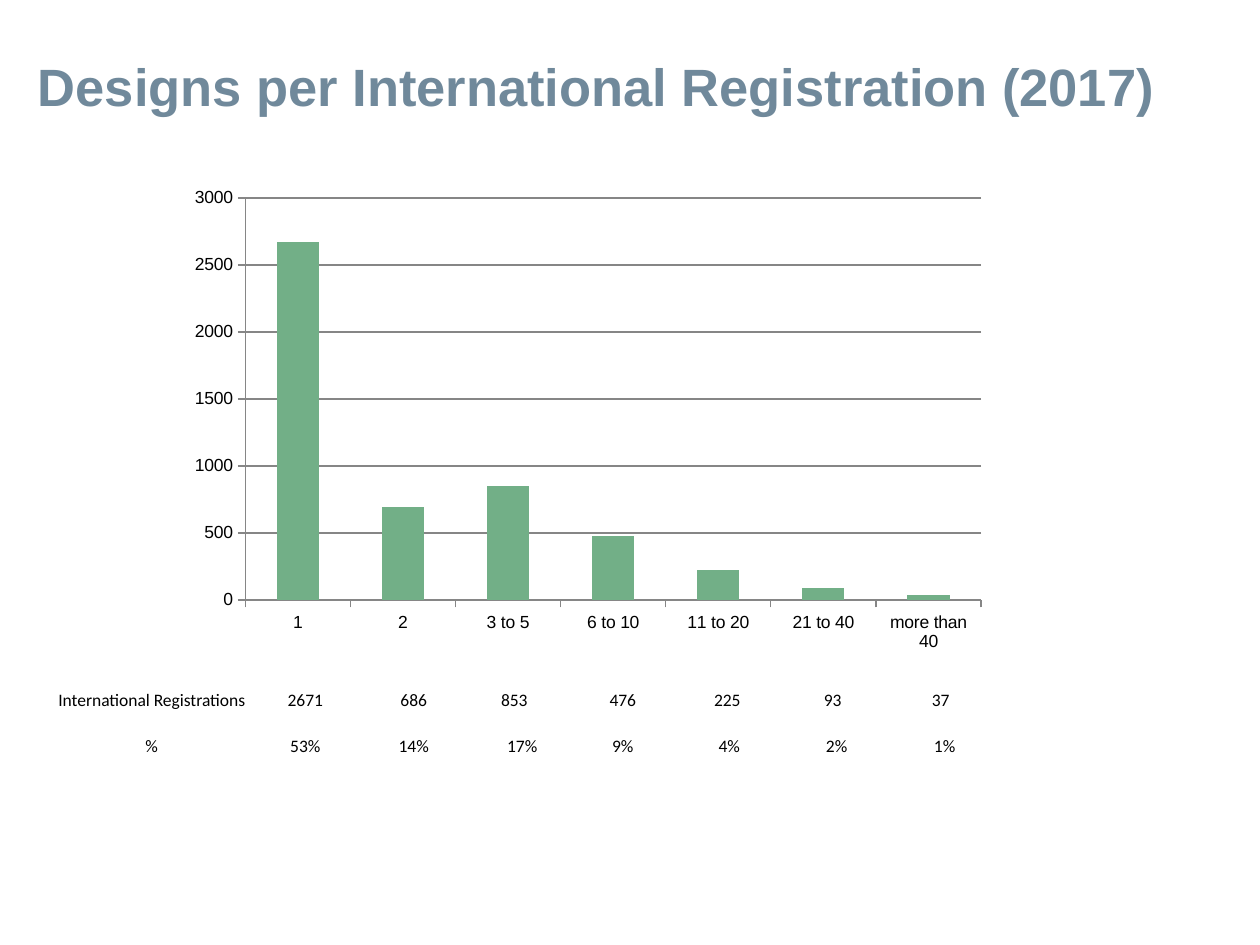
from pptx import Presentation
from pptx.chart.data import CategoryChartData
from pptx.dml.color import RGBColor
from pptx.enum.chart import XL_CHART_TYPE as ChartType, XL_TICK_MARK as TickMark
from pptx.enum.text import MSO_ANCHOR as Anchor, PP_ALIGN as Align
from pptx.util import Pt

COLORS = {"title": "70899B", "bar": "72AF87", "axis": "868686",
          "text": "000000", "cell": "FFFFFF"}

DESIGNS = ["1", "2", "3 to 5", "6 to 10", "11 to 20", "21 to 40", "more than 40"]
BAR_HEIGHTS = [2670, 690, 850, 480, 220, 90, 40]
REGISTRATIONS = ["2671", "686", "853", "476", "225", "93", "37"]
SHARES = ["53%", "14%", "17%", "9%", "4%", "2%", "1%"]

COLUMN_WIDTHS = [113, 62.5, 57, 62.5, 57, 62.5, 62.5, 61]
ROW_HEIGHTS = [28, 26]
# Extra left inset of each cell, in points, nudging its centred text rightwards
NUDGES = [[0, 0, 4.5, 0, 4.5, 4.5, 0, 0],
          [0, 0, 4.5, 9, 4.5, 6.8, 4.5, 4.5]]


def color(name):
    return RGBColor.from_string(COLORS[name])


def style_font(font, face, size, color_name, bold=False):
    font.name, font.size, font.bold = face, Pt(size), bold
    font.color.rgb = color(color_name)


def place_title(slide, left, top, width, height):
    title = slide.shapes.title
    title.left, title.top, title.width, title.height = map(Pt, (left, top, width, height))
    frame = title.text_frame
    frame.text = "Designs per International Registration (2017)"
    frame.word_wrap = True
    frame.vertical_anchor = Anchor.MIDDLE
    frame.margin_bottom = Pt(61)
    paragraph = frame.paragraphs[0]
    paragraph.alignment = Align.LEFT
    style_font(paragraph.font, "Arial", 30, "title", bold=True)


def add_registrations_chart(slide, left, top, width, height):
    data = CategoryChartData()
    data.categories = DESIGNS
    data.add_series("Series 1", BAR_HEIGHTS)
    chart = slide.shapes.add_chart(ChartType.COLUMN_CLUSTERED, Pt(left), Pt(top),
                                   Pt(width), Pt(height), data).chart
    chart.has_legend = False
    chart.has_title = False
    style_font(chart.font, "Arial", 10, "text")

    plot = chart.plots[0]
    plot.gap_width = 150
    plot.vary_by_categories = False
    bars = plot.series[0].format.fill
    bars.solid()
    bars.fore_color.rgb = color("bar")

    counts = chart.value_axis
    counts.minimum_scale, counts.maximum_scale, counts.major_unit = 0, 3000, 500
    counts.has_major_gridlines = True
    for axis in (chart.category_axis, counts):
        axis.major_tick_mark = TickMark.OUTSIDE
    for part in (chart.category_axis, counts, counts.major_gridlines):
        part.format.line.color.rgb = color("axis")
        part.format.line.width = Pt(0.75)


def add_shares_table(slide, left, top):
    rows = [["International Registrations", *REGISTRATIONS], ["%", *SHARES]]
    table = slide.shapes.add_table(len(rows), len(COLUMN_WIDTHS), Pt(left), Pt(top),
                                   Pt(sum(COLUMN_WIDTHS)), Pt(sum(ROW_HEIGHTS))).table
    table.first_row = table.horz_banding = False
    for column, width in zip(table.columns, COLUMN_WIDTHS):
        column.width = Pt(width)
    for row, height, texts, nudges in zip(table.rows, ROW_HEIGHTS, rows, NUDGES):
        row.height = Pt(height)
        for cell, text, nudge in zip(row.cells, texts, nudges):
            cell.text = text
            cell.fill.solid()
            cell.fill.fore_color.rgb = color("cell")
            cell.vertical_anchor = Anchor.BOTTOM
            cell.margin_left = Pt(0.7 + nudge)
            cell.margin_right = cell.margin_top = Pt(0.7)
            cell.margin_bottom = 0
            paragraph = cell.text_frame.paragraphs[0]
            paragraph.alignment = Align.CENTER
            style_font(paragraph.font, "Calibri", 10, "text")


def main():
    deck = Presentation()
    deck.slide_width, deck.slide_height = Pt(720), Pt(540)
    slide = deck.slides.add_slide(deck.slide_layouts[5])
    place_title(slide, 14.4, 21.6, 669.6, 111.6)
    add_shares_table(slide, 30.2, 378.5)
    add_registrations_chart(slide, 102, 102, 468, 276)
    deck.save("out.pptx")


if __name__ == "__main__":
    main()
